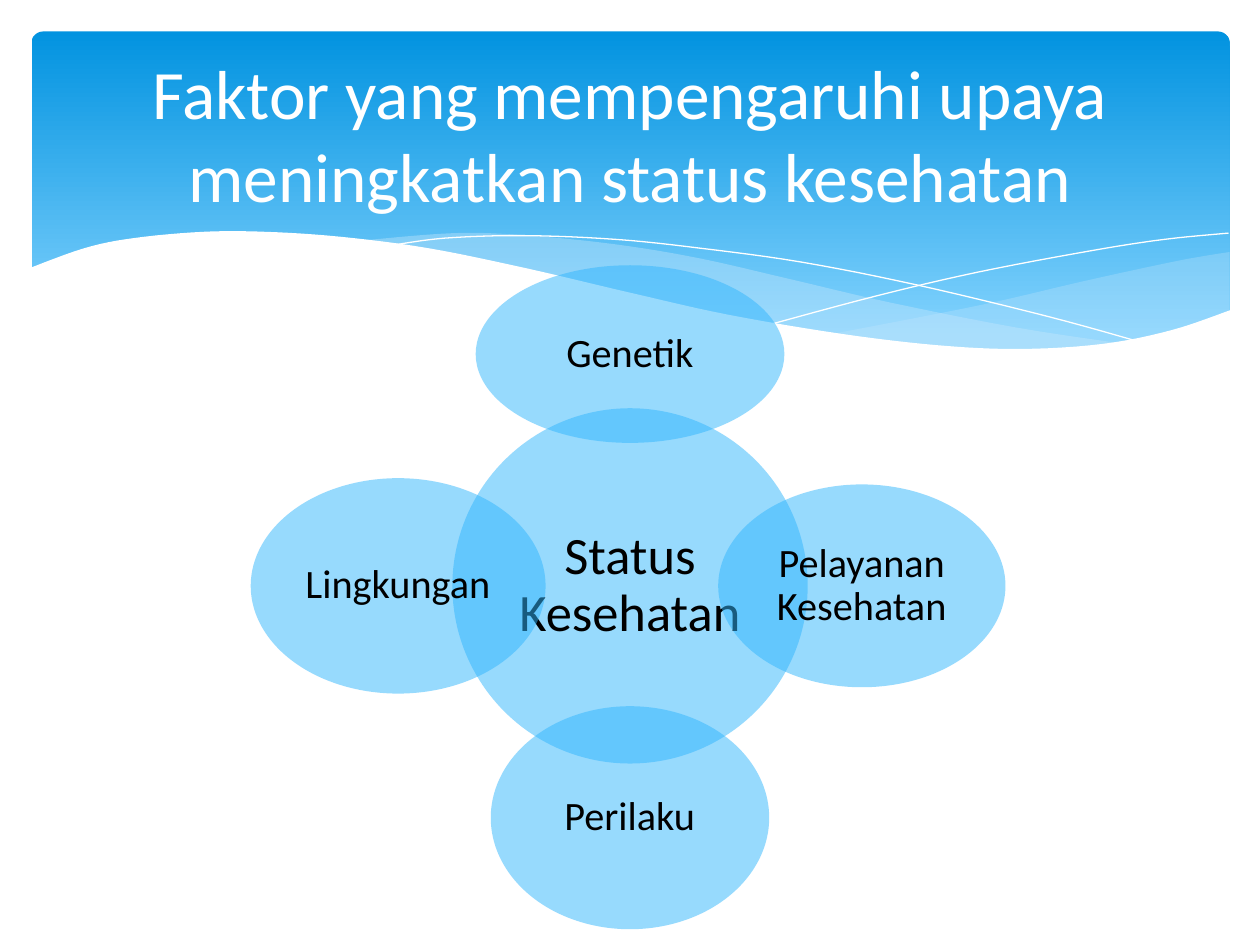
import dataclasses

import lxml.etree
import pptx
import pptx.dml.color
import pptx.enum.shapes
import pptx.enum.text
import pptx.oxml.ns
import pptx.util
from pptx.util import Inches


@dataclasses.dataclass(frozen=True)
class Theme:
    font: str = "Calibri"
    white: str = "FFFFFF"
    black: str = "000000"
    banner_top: str = "0293E0"
    banner_bottom: str = "83D3FE"
    wave: str = "C6E7FC"
    circle: str = "31B6FD"
    title_size: float = 39.6
    center_size: float = 30
    factor_size: float = 23


THEME = Theme()

# Crests of the banner waves, in inches on a 10 x 7.5 slide
RIGHT_WAVE_TOP = [(9.76, 2), (9.35, 2.07), (8.61, 2.23), (7.79, 2.42), (6.61, 2.65)]
RIGHT_WAVE_BOTTOM = [(6.61, 2.65), (7.19, 2.72), (7.81, 2.77), (8.35, 2.77),
                     (8.89, 2.72), (9.35, 2.62), (9.76, 2.47)]
LONG_WAVE_TOP = [(8.93, 2.73), (8.07, 2.6), (7.06, 2.4), (6.29, 2.22), (5.55, 2.05),
                 (4.89, 1.94), (4.2, 1.87), (3.61, 1.85), (2.86, 1.91)]
LONG_WAVE_BOTTOM = [(2.86, 1.91), (3.62, 2.03), (4.49, 2.22), (5.3, 2.4), (6.01, 2.55),
                    (6.8, 2.68), (7.48, 2.76), (8.18, 2.78), (8.93, 2.73)]
FALLING_LINE = [(3.09, 1.95), (3.53, 1.89), (4.16, 1.87), (4.89, 1.9), (5.56, 1.97),
                (6.36, 2.08), (7.27, 2.26), (8.31, 2.51), (9.07, 2.72)]
RISING_LINE = [(6.13, 2.57), (6.95, 2.35), (7.76, 2.16), (8.66, 1.99), (9.24, 1.9),
               (9.75, 1.85)]
WHITE_EDGE = [(9.77, 2.46), (9.3, 2.62), (8.75, 2.73), (8.09, 2.77), (7.44, 2.74),
              (6.68, 2.65), (5.79, 2.5), (5.03, 2.33), (4.18, 2.13), (3.4, 1.97),
              (2.71, 1.88), (2.11, 1.84), (1.61, 1.84), (1.06, 1.89), (0.67, 1.97),
              (0.23, 2.13)]
WHITE_BASE = [(0.23, 3.29), (9.77, 3.29)]


def rgb(color):
    return pptx.dml.color.RGBColor.from_string(color)


def set_fill(shape, color, opacity=100):
    """Fill a shape with a solid colour at an opacity in percent."""
    shape.fill.solid()
    shape.fill.fore_color.rgb = rgb(color)
    if opacity < 100:
        fill_node = shape._element.spPr.find(pptx.oxml.ns.qn("a:solidFill"))
        lxml.etree.SubElement(fill_node[0], pptx.oxml.ns.qn("a:alpha"),
                              val=str(opacity * 1000))


def add_run(paragraph, text, size, color):
    run = paragraph.add_run()
    run.text = text
    run.font.name = THEME.font
    run.font.size = pptx.util.Pt(size)
    run.font.color.rgb = rgb(color)


def smooth(anchors, steps=6):
    """Pass a Catmull-Rom curve through the anchors."""
    padded = [anchors[0], *anchors, anchors[-1]]
    points = [anchors[0]]
    for a, b, c, d in zip(padded, padded[1:], padded[2:], padded[3:]):
        for step in range(1, steps + 1):
            t = step / steps
            points.append(tuple(
                0.5 * (2 * q + (r - p) * t + (2 * p - 5 * q + 4 * r - s) * t ** 2
                       + (3 * q - p - 3 * r + s) * t ** 3)
                for p, q, r, s in zip(a, b, c, d)))
    return points


def add_outline(slide, points, closed):
    """Draw a freeform through points given in inches."""
    start, *rest = [(Inches(x), Inches(y)) for x, y in points]
    builder = slide.shapes.build_freeform(*start, scale=1.0)
    builder.add_line_segments(rest, close=closed)
    shape = builder.convert_to_shape()
    shape.shadow.inherit = False
    return shape


def add_wave(slide, points, color, opacity=100):
    shape = add_outline(slide, points, closed=True)
    set_fill(shape, color, opacity)
    shape.line.fill.background()


def add_wave_line(slide, anchors):
    shape = add_outline(slide, smooth(anchors), closed=False)
    shape.fill.background()
    shape.line.color.rgb = rgb(THEME.white)
    shape.line.width = 0


def add_banner(slide, left, top, width, height):
    """Gradient panel with waves along its lower edge."""
    panel = slide.shapes.add_shape(
        pptx.enum.shapes.MSO_SHAPE.ROUNDED_RECTANGLE, left, top, width, height)
    panel.adjustments[0] = 0.034
    panel.shadow.inherit = False
    panel.line.fill.background()
    panel.fill.gradient()
    panel.fill.gradient_angle = 270
    stops = [(0, THEME.banner_top), (0.9, THEME.banner_bottom)]
    for stop, (position, color) in zip(panel.fill.gradient_stops, stops):
        stop.position = position
        stop.color.rgb = rgb(color)

    add_wave(slide, smooth(RIGHT_WAVE_TOP) + smooth(RIGHT_WAVE_BOTTOM), THEME.wave, 29)
    add_wave(slide, smooth(LONG_WAVE_TOP) + smooth(LONG_WAVE_BOTTOM), THEME.wave, 40)
    add_wave_line(slide, FALLING_LINE)
    add_wave_line(slide, RISING_LINE)
    add_wave(slide, smooth(WHITE_EDGE) + WHITE_BASE, THEME.white)


def add_circle(slide, center_x, center_y, width, height, text, size, margin):
    """Translucent ellipse around a centre, with its label."""
    shape = slide.shapes.add_shape(
        pptx.enum.shapes.MSO_SHAPE.OVAL,
        center_x - width // 2, center_y - height // 2, width, height)
    shape.shadow.inherit = False
    set_fill(shape, THEME.circle, 50)
    shape.line.fill.background()
    frame = shape.text_frame
    frame.word_wrap = True
    frame.vertical_anchor = pptx.enum.text.MSO_ANCHOR.MIDDLE
    frame.margin_left = frame.margin_right = margin
    frame.margin_top = frame.margin_bottom = margin
    paragraph = frame.paragraphs[0]
    paragraph.alignment = pptx.enum.text.PP_ALIGN.CENTER
    paragraph.line_spacing = 0.9
    add_run(paragraph, text, size, THEME.black)


def add_factor_diagram(slide, center_x, center_y, diameter, reach):
    """Central circle with four factors, each centred at the same reach."""
    add_circle(slide, center_x, center_y, diameter, diameter,
               "Status Kesehatan", THEME.center_size, Inches(0.04))
    factors = [
        ("Genetik", 0, -1, 2.45, 1.41),
        ("Pelayanan Kesehatan", 1, 0, 2.28, 1.61),
        ("Perilaku", 0, 1, 2.21, 1.77),
        ("Lingkungan", -1, 0, 2.34, 1.71),
    ]
    for text, across, down, width, height in factors:
        add_circle(slide, center_x + across * reach, center_y + down * reach,
                   Inches(width), Inches(height), text, THEME.factor_size, Inches(0.03))


def place_title(slide, left, top, width, height):
    title = slide.shapes.title
    title.left, title.top, title.width, title.height = left, top, width, height
    slide.shapes._spTree.append(title._element)  # bring in front of the banner
    frame = title.text_frame
    frame.word_wrap = True
    frame.auto_size = pptx.enum.text.MSO_AUTO_SIZE.NONE
    frame.vertical_anchor = pptx.enum.text.MSO_ANCHOR.MIDDLE
    paragraph = frame.paragraphs[0]
    paragraph.alignment = pptx.enum.text.PP_ALIGN.CENTER
    add_run(paragraph, "Faktor yang mempengaruhi upaya meningkatkan status kesehatan",
            THEME.title_size, THEME.white)


def main():
    presentation = pptx.Presentation()
    presentation.slide_width = Inches(10)
    presentation.slide_height = Inches(7.5)
    slide = presentation.slides.add_slide(presentation.slide_layouts[5])
    add_banner(slide, Inches(0.25), Inches(0.25), Inches(9.51), Inches(2.7))
    add_factor_diagram(slide, Inches(5), Inches(4.65), Inches(2.82), Inches(1.84))
    place_title(slide, Inches(0.5), Inches(0.37), Inches(9), Inches(1.37))
    presentation.save("out.pptx")


if __name__ == "__main__":
    main()
